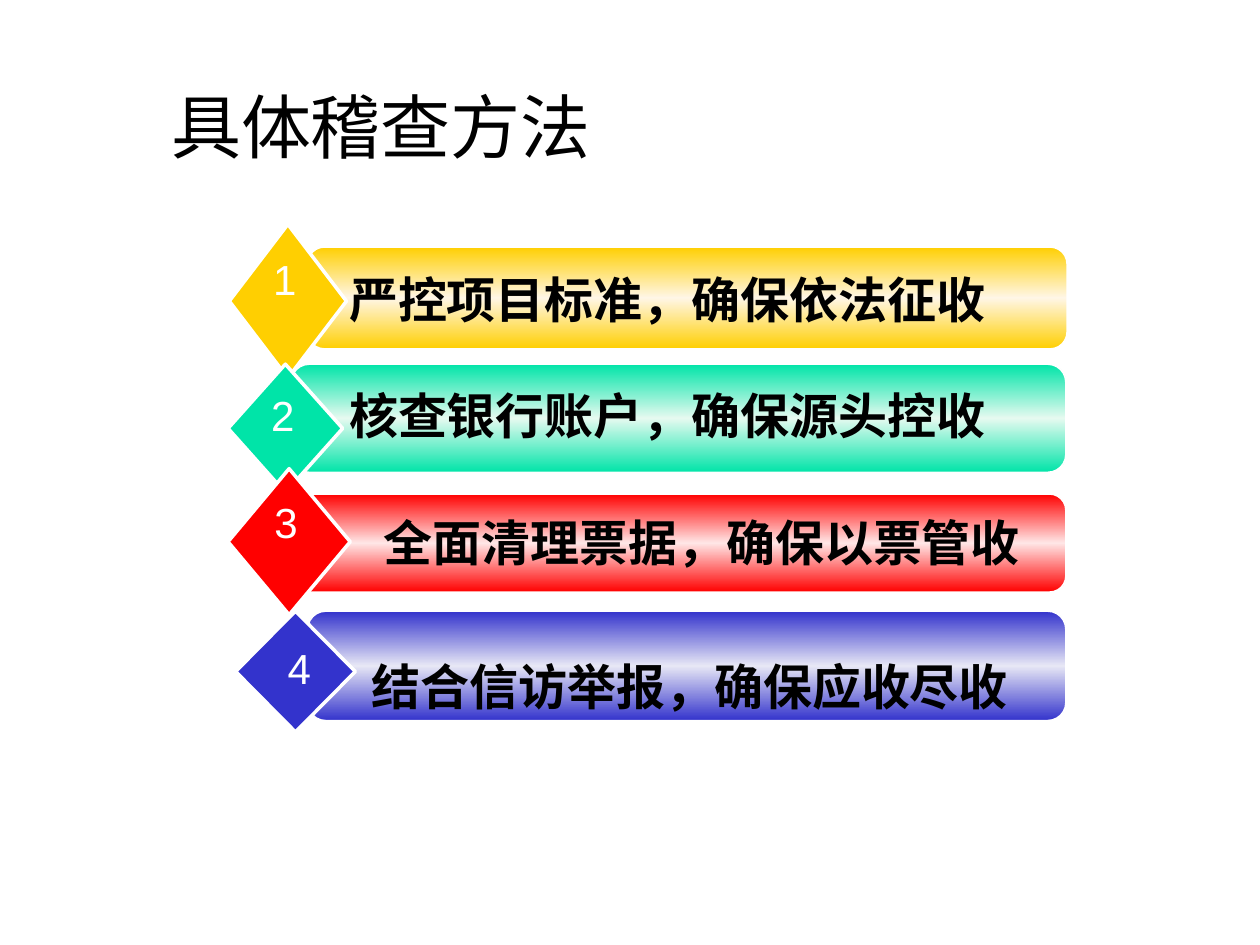
from copy import deepcopy
from dataclasses import dataclass

from lxml.etree import SubElement
from pptx import Presentation
from pptx.dml.color import RGBColor
from pptx.enum.shapes import MSO_SHAPE as SHAPE
from pptx.enum.text import MSO_ANCHOR as ANCHOR, PP_ALIGN as ALIGN
from pptx.oxml.ns import qn
from pptx.util import Inches, Pt


@dataclass(frozen=True)
class Theme:
    black: str = "000000"
    white: str = "FFFFFF"
    # (edge, middle) of each bar
    pairs: tuple = (("FFCF01", "FFF6E6"), ("00E4A8", "E6FAF0"),
                    ("FF0000", "FFE6E6"), ("3333CC", "E7E7F5"))
    latin: str = "Arial"
    cjk: str = "Noto Sans CJK JP"
    title: int = 40
    label: int = 28
    number: int = 24


def rgb(value):
    return RGBColor.from_string(value)


class Deck:
    def __init__(self, prs, theme):
        self.theme = theme
        self.s = prs.slides.add_slide(prs.slide_layouts[6])

    def text(self, box, text, size, color, font, bold=False,
             align=ALIGN.CENTER, anchor=ANCHOR.TOP, wrap=True):
        tf = self.s.shapes.add_textbox(*map(Inches, box)).text_frame
        tf.word_wrap = wrap
        tf.vertical_anchor = anchor
        p = tf.paragraphs[0]
        p.text = text
        p.alignment = align
        p.font.size = Pt(size)
        p.font.bold = bold
        p.font.color.rgb = rgb(color)
        p.font.name = font
        # East Asian typeface
        props = p._p.pPr.find(qn("a:defRPr"))
        SubElement(props, qn("a:ea")).set("typeface", self.theme.cjk)

    def shape(self, kind, box, line_width):
        sp = self.s.shapes.add_shape(kind, *map(Inches, box))
        sp.shadow.inherit = False
        sp.line.color.rgb = rgb(self.theme.white)
        sp.line.width = Pt(line_width)
        return sp

    def bar(self, box, edge, middle):
        sp = self.shape(SHAPE.ROUNDED_RECTANGLE, box, 1)
        sp.fill.gradient()
        sp.fill.gradient_angle = 270
        first = sp.fill.gradient_stops[0]._gs
        first.addnext(deepcopy(first))
        stops = zip(sp.fill.gradient_stops, (0, 0.5, 1), (edge, middle, edge))
        for stop, position, color in stops:
            stop.position = position
            stop.color.rgb = rgb(color)

    def diamond(self, box, color):
        sp = self.shape(SHAPE.DIAMOND, box, 2)
        sp.fill.solid()
        sp.fill.fore_color.rgb = rgb(color)

    def method(self, number, label, colors, boxes):
        t = self.theme
        bar, diamond, label_box, number_box = boxes
        self.bar(bar, *colors)
        self.diamond(diamond, colors[0])
        self.text(label_box, label, t.label, t.black, t.latin, bold=True)
        self.text(number_box, str(number), t.number, t.white, t.latin, wrap=False)


# Label, then boxes of bar, diamond, label and number
METHODS = (
    ("严控项目标准，确保依法征收",
     ((2.44, 1.96, 6.03, 0.81), (1.82, 1.78, 0.93, 1.22),
      (2.64, 2.09, 5.31, 1.04), (2.02, 1.96, 0.48, 0.81))),
    ("核查银行账户，确保源头控收",
     ((2.31, 2.89, 6.15, 0.86), (1.81, 2.89, 0.91, 1.02),
      (2.52, 3.01, 5.55, 0.57), (2.01, 3.04, 0.47, 0.68))),
    ("全面清理票据，确保以票管收",
     ((2.34, 3.92, 6.12, 0.78), (1.81, 3.72, 0.97, 1.16),
      (2.67, 4.02, 5.8, 0.57), (2.02, 3.89, 0.5, 0.78))),
    ("结合信访举报，确保应收尽收",
     ((2.44, 4.85, 6.02, 0.87), (1.87, 4.85, 0.95, 0.96),
      (2.76, 5.16, 5.43, 1.04), (2.13, 5.05, 0.49, 0.64))),
)


def main():
    prs = Presentation()
    prs.slide_width, prs.slide_height = Inches(10), Inches(7.5)
    theme = Theme()
    deck = Deck(prs, theme)

    # Title
    deck.text((1.26, 0.23, 8.52, 1.15), "具体稽查方法", theme.title, theme.black,
              theme.cjk, align=ALIGN.LEFT, anchor=ANCHOR.BOTTOM)

    # Numbered methods
    for number, ((label, boxes), colors) in enumerate(zip(METHODS, theme.pairs), 1):
        deck.method(number, label, colors, boxes)

    prs.save("out.pptx")


if __name__ == "__main__":
    main()
